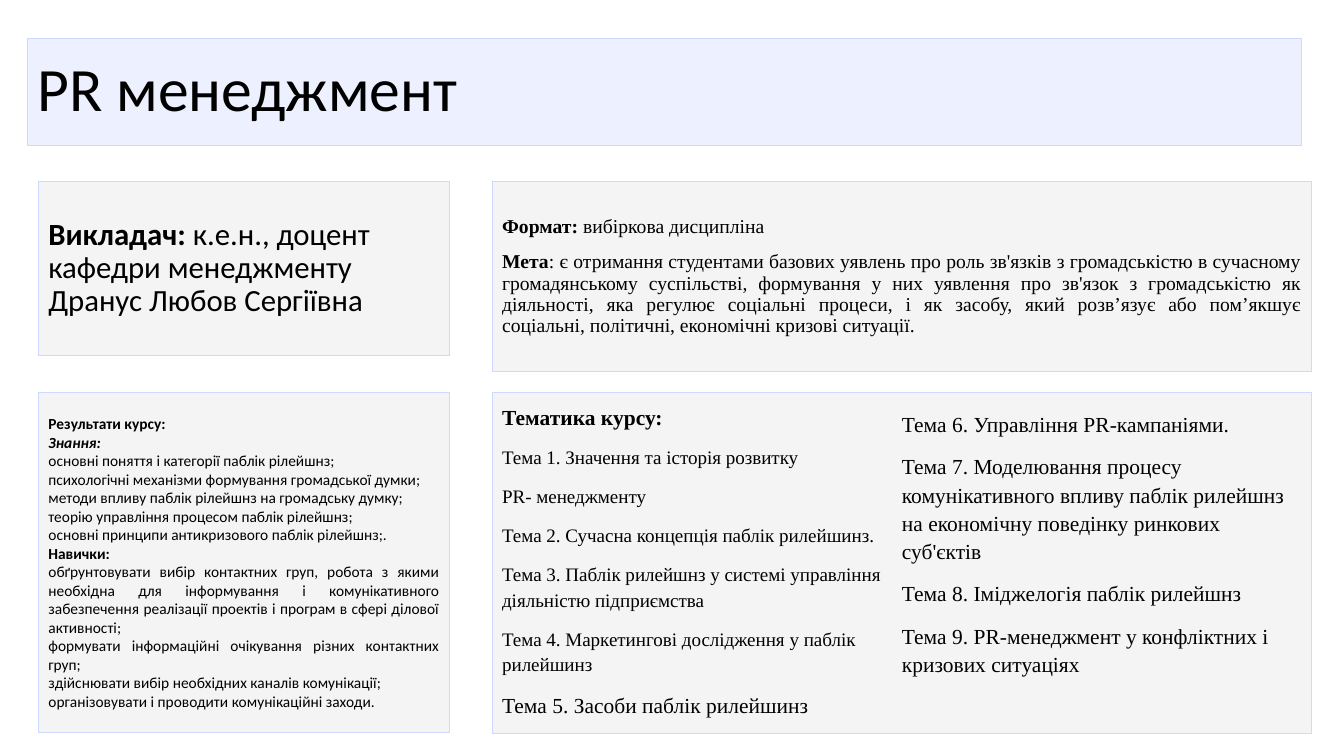
from dataclasses import dataclass

import pptx
import pptx.dml.color
import pptx.enum.text
import pptx.oxml.ns
import pptx.util
from lxml import etree
from pptx.util import Inches

Align = pptx.enum.text.PP_ALIGN


@dataclass(frozen=True)
class Theme:
    text: str = "000000"
    border: str = "CDD9FF"
    title_fill: str = "E5EBFF"
    title_opacity: int = 70
    panel_fill: str = "F0F0F0"
    panel_opacity: int = 69
    sans: str = "Calibri"
    serif: str = "Times New Roman"
    title_size: float = 44
    teacher_size: float = 22
    format_size: float = 14
    results_size: float = 11
    topic_size: float = 15.3
    small_topic_size: float = 13.6


THEME = Theme()


@dataclass(frozen=True)
class Run:
    text: str
    bold: bool = False
    italic: bool = False


@dataclass(frozen=True)
class Paragraph:
    runs: tuple[Run, ...]
    size: float
    line_spacing: float = 1.0
    space_before: float = 0
    align: Align = Align.LEFT


@dataclass(frozen=True)
class Panel:
    placeholder: int
    box: tuple[float, float, float, float]
    font: str
    paragraphs: list[Paragraph]
    fill: str = THEME.panel_fill
    opacity: int = THEME.panel_opacity
    columns: int = 1


# Grid of the four panels
LEFT, RIGHT = 0.38, 4.88
TOP, BOTTOM = 1.8, 3.89
LEFT_WIDTH, RIGHT_WIDTH = 4.08, 8.13

# Panel texts
RESULTS = [
    Run("Результати курсу:", bold=True),
    Run("Знання:", bold=True, italic=True),
    Run("основні поняття і категорії паблік рілейшнз;"),
    Run("психологічні механізми формування громадської думки;"),
    Run("методи впливу паблік рілейшнз на громадську думку;"),
    Run("теорію управління процесом паблік рілейшнз;"),
    Run("основні принципи антикризового паблік рілейшнз;."),
    Run("Навички:", bold=True),
    Run("обґрунтовувати вибір контактних груп, робота з якими необхідна для "
        "інформування і комунікативного забезпечення реалізації проектів і "
        "програм в сфері ділової активності;"),
    Run("формувати інформаційні очікування різних контактних груп;"),
    Run("здійснювати вибір необхідних каналів комунікації;"),
    Run("організовувати і проводити комунікаційні заходи."),
]
SMALL_TOPICS = [
    "Тема 1. Значення та історія розвитку",
    "PR- менеджменту",
    "Тема 2. Сучасна концепція паблік рилейшинз.",
    "Тема 3. Паблік рилейшнз у системі управління діяльністю підприємства",
    "Тема 4. Маркетингові дослідження у паблік рилейшинз",
]
TOPICS = [
    "Тема 5. Засоби паблік рилейшинз",
    "Тема 6. Управління PR-кампаніями.",
    "Тема 7. Моделювання процесу комунікативного впливу паблік рилейшнз "
    "на економічну поведінку ринкових суб'єктів",
    "Тема 8. Іміджелогія паблік рилейшнз",
    "Тема 9. PR-менеджмент у конфліктних і кризових ситуаціях",
]
AIM = (": є отримання студентами базових уявлень про роль зв'язків з "
       "громадськістю в сучасному громадянському суспільстві, формування у них "
       "уявлення про зв'язок з громадськістю як діяльності, яка регулює "
       "соціальні процеси, і як засобу, який розв’язує або пом’якшує "
       "соціальні, політичні, економічні кризові ситуації.")


def topic_paragraphs(topics: list[str], size: float) -> list[Paragraph]:
    return [Paragraph((Run(topic),), size, 1.1, 10) for topic in topics]


PANELS = [
    Panel(0, (0.27, 0.38, 12.64, 1.06), THEME.sans,
          [Paragraph((Run("PR менеджмент"),), THEME.title_size, 0.9)],
          THEME.title_fill, THEME.title_opacity),
    Panel(1, (LEFT, TOP, LEFT_WIDTH, 1.73), THEME.sans,
          [Paragraph((Run("Викладач: ", bold=True),
                      Run("к.е.н., доцент кафедри менеджменту "
                          "Дранус Любов Сергіївна")),
                     THEME.teacher_size, 0.9)]),
    Panel(2, (LEFT, BOTTOM, LEFT_WIDTH, 3.38), THEME.sans,
          [Paragraph((run,), THEME.results_size, align=Align.JUSTIFY)
           for run in RESULTS]),
    Panel(3, (RIGHT, TOP, RIGHT_WIDTH, 1.89), THEME.serif,
          [Paragraph((Run("Формат: ", bold=True), Run("вибіркова дисципліна")),
                     THEME.format_size, 0.9, align=Align.JUSTIFY),
           Paragraph((Run("Мета", bold=True), Run(AIM)),
                     THEME.format_size, 0.9, 10, Align.JUSTIFY)]),
    Panel(4, (RIGHT, BOTTOM, RIGHT_WIDTH, 3.39), THEME.serif,
          [Paragraph((Run("Тематика курсу:", bold=True),), THEME.topic_size, 0.8),
           *topic_paragraphs(SMALL_TOPICS, THEME.small_topic_size),
           *topic_paragraphs(TOPICS, THEME.topic_size)],
          columns=2),
]


def color(value: str) -> pptx.dml.color.RGBColor:
    return pptx.dml.color.RGBColor.from_string(value)


def format_box(shape, panel: Panel) -> None:
    shape.left, shape.top, shape.width, shape.height = map(Inches, panel.box)
    shape.fill.solid()
    shape.fill.fore_color.rgb = color(panel.fill)
    # Opacity of the fill
    fill_color = shape.fill._xPr.find(".//" + pptx.oxml.ns.qn("a:srgbClr"))
    etree.SubElement(fill_color, pptx.oxml.ns.qn("a:alpha"),
                     val=str(panel.opacity * 1000))
    shape.line.color.rgb = color(THEME.border)
    shape.line.width = pptx.util.Pt(0.75)


def write_paragraph(paragraph, content: Paragraph, font: str) -> None:
    # No bullet and no hanging indent
    properties = paragraph._p.get_or_add_pPr()
    properties.set("marL", "0")
    properties.set("indent", "0")
    etree.SubElement(properties, pptx.oxml.ns.qn("a:buNone"))
    paragraph.alignment = content.align
    paragraph.line_spacing = content.line_spacing
    paragraph.space_before = pptx.util.Pt(content.space_before)
    for item in content.runs:
        run = paragraph.add_run()
        run.text = item.text
        run.font.name = font
        run.font.size = pptx.util.Pt(content.size)
        run.font.bold = item.bold
        run.font.italic = item.italic
        run.font.color.rgb = color(THEME.text)


def draw_panel(slide, panel: Panel) -> None:
    shape = next(placeholder for placeholder in slide.placeholders
                 if placeholder.placeholder_format.idx == panel.placeholder)
    format_box(shape, panel)
    frame = shape.text_frame
    frame.word_wrap = True
    frame.auto_size = pptx.enum.text.MSO_AUTO_SIZE.NONE
    frame.vertical_anchor = pptx.enum.text.MSO_ANCHOR.MIDDLE
    if panel.columns > 1:
        frame._txBody.bodyPr.set("numCol", str(panel.columns))
    for index, content in enumerate(panel.paragraphs):
        paragraph = frame.add_paragraph() if index else frame.paragraphs[0]
        write_paragraph(paragraph, content, panel.font)


def main() -> None:
    presentation = pptx.Presentation()
    presentation.slide_width = Inches(13.33)
    presentation.slide_height = Inches(7.5)
    # The comparison layout holds a title and four bodies
    slide = presentation.slides.add_slide(presentation.slide_layouts[4])
    for panel in PANELS:
        draw_panel(slide, panel)
    presentation.save("out.pptx")


if __name__ == "__main__":
    main()
